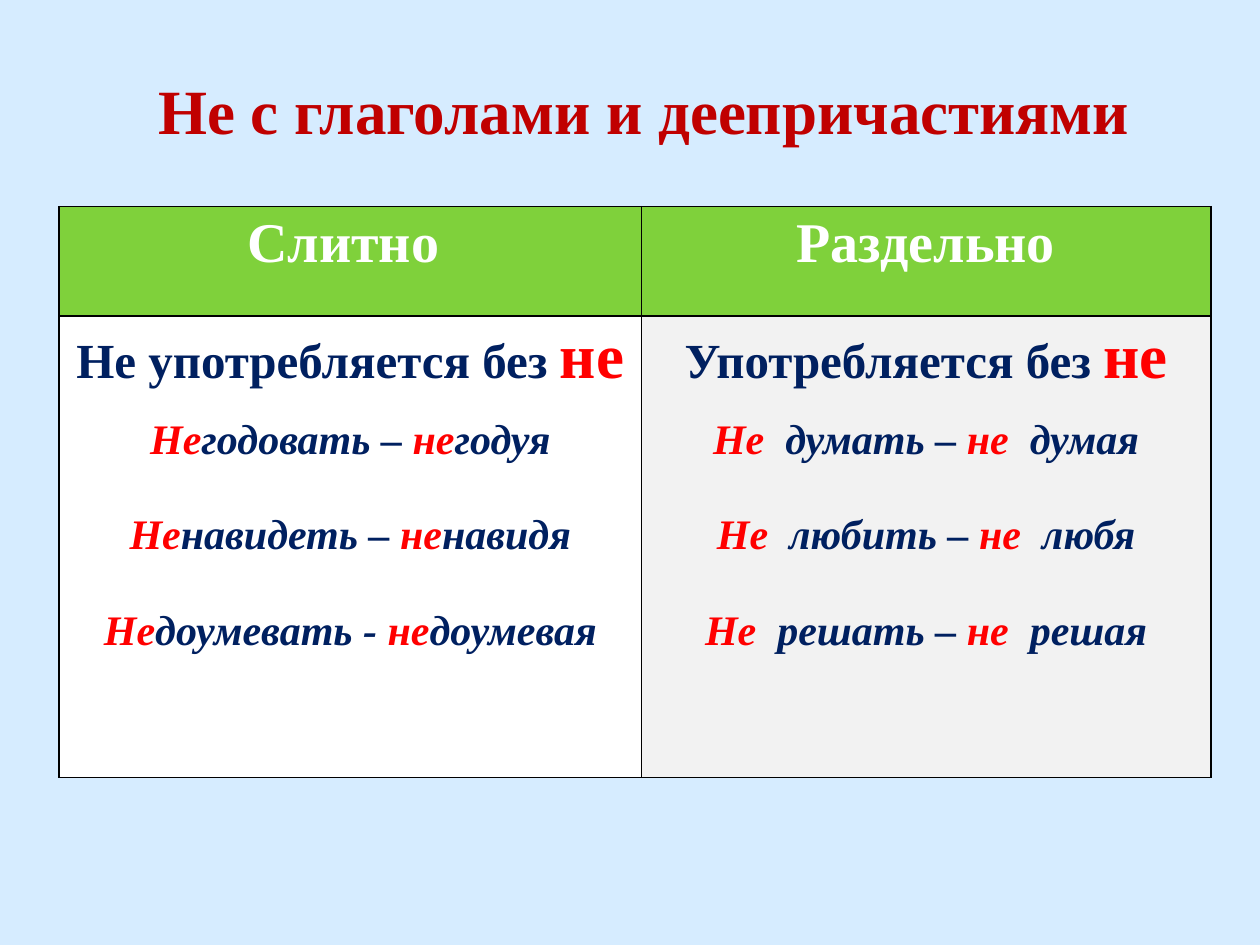
from lxml import etree
from pptx import Presentation
from pptx.dml.color import RGBColor
from pptx.enum.text import MSO_ANCHOR, PP_ALIGN
from pptx.oxml.ns import qn
from pptx.util import Inches, Pt

CENTER = PP_ALIGN.CENTER
MIDDLE = MSO_ANCHOR.MIDDLE
FONT = "Times New Roman"
NAVY, RED, DARK_RED = "002060", "FF0000", "C00000"
WHITE, GRAY, GREEN, BLACK, SKY = "FFFFFF", "F2F2F2", "7FD13B", "000000", "D6ECFF"

# Asterisks enclose the particle that is highlighted in red
COLUMNS = [
    ("Слитно ", WHITE, "Не употребляется без *не*",
     ["*Не*годовать – *не*годуя",
      "*Не*навидеть – *не*навидя",
      "*Не*доумевать - *не*доумевая"]),
    ("Раздельно", GRAY, "Употребляется без *не*",
     ["*Не*  думать – *не*  думая",
      "*Не*  любить – *не*  любя",
      "*Не*  решать – *не*  решая"]),
]


def color(value):
    return RGBColor.from_string(value)


def add_run(paragraph, text, size, fill, italic=False):
    run = paragraph.add_run()
    run.text = text
    font = run.font
    font.name, font.size = FONT, Pt(size)
    font.bold, font.italic = True, italic
    font.color.rgb = color(fill)


def add_marked_text(paragraph, text, size, marked_size, italic=False):
    paragraph.alignment = CENTER
    for index, part in enumerate(text.split("*")):
        if part:
            marked = index % 2 == 1
            add_run(paragraph, part, marked_size if marked else size,
                    RED if marked else NAVY, italic)


def style_cell(cell, fill):
    cell.fill.solid()
    cell.fill.fore_color.rgb = color(fill)
    properties = cell._tc.get_or_add_tcPr()
    # Borders come before the fill in the cell properties
    for position, side in enumerate(("a:lnL", "a:lnR", "a:lnT", "a:lnB")):
        line = etree.Element(qn(side), w=str(Pt(1)))
        solid = etree.SubElement(line, qn("a:solidFill"))
        etree.SubElement(solid, qn("a:srgbClr"), val=BLACK)
        properties.insert(position, line)


def add_title(slide, left, top, width, height):
    shape = slide.shapes.add_textbox(
        Inches(left), Inches(top), Inches(width), Inches(height))
    frame = shape.text_frame
    frame.word_wrap = True
    frame.vertical_anchor = MIDDLE
    # The bottom margin lifts the title into the upper part of its box
    frame.margin_top, frame.margin_bottom = 0, Inches(0.53)
    paragraph = frame.paragraphs[0]
    paragraph.alignment = CENTER
    add_run(paragraph, "Не с глаголами и деепричастиями", 36, DARK_RED)


def fill_rule_cell(cell, rule, examples):
    add_marked_text(cell.text_frame.paragraphs[0], rule, 28, 36)
    for index, example in enumerate(examples):
        paragraph = cell.text_frame.add_paragraph()
        paragraph.space_before = Pt(28 if index else 14)
        add_marked_text(paragraph, example, 24, 24, italic=True)


def add_rule_table(slide, left, top, widths, heights):
    table = slide.shapes.add_table(
        len(heights), len(widths), Inches(left), Inches(top),
        Inches(sum(widths)), Inches(sum(heights))).table
    table.first_row = table.horz_banding = False
    for row, height in zip(table.rows, heights):
        row.height = Inches(height)
    for index, (heading, fill, rule, examples) in enumerate(COLUMNS):
        table.columns[index].width = Inches(widths[index])
        header, body = table.cell(0, index), table.cell(1, index)
        style_cell(header, GREEN)
        style_cell(body, fill)
        paragraph = header.text_frame.paragraphs[0]
        paragraph.alignment = CENTER
        add_run(paragraph, heading, 32, WHITE)
        fill_rule_cell(body, rule, examples)


def main():
    presentation = Presentation()
    presentation.slide_width, presentation.slide_height = Inches(10), Inches(7.5)
    slide = presentation.slides.add_slide(presentation.slide_layouts[6])
    background = slide.background.fill
    background.solid()
    background.fore_color.rgb = color(SKY)
    add_title(slide, 0.86, 0.7, 8.5, 0.86)
    add_rule_table(slide, 0.47, 1.64, widths=(4.62, 4.52), heights=(0.87, 3.66))
    presentation.save("out.pptx")


if __name__ == "__main__":
    main()
